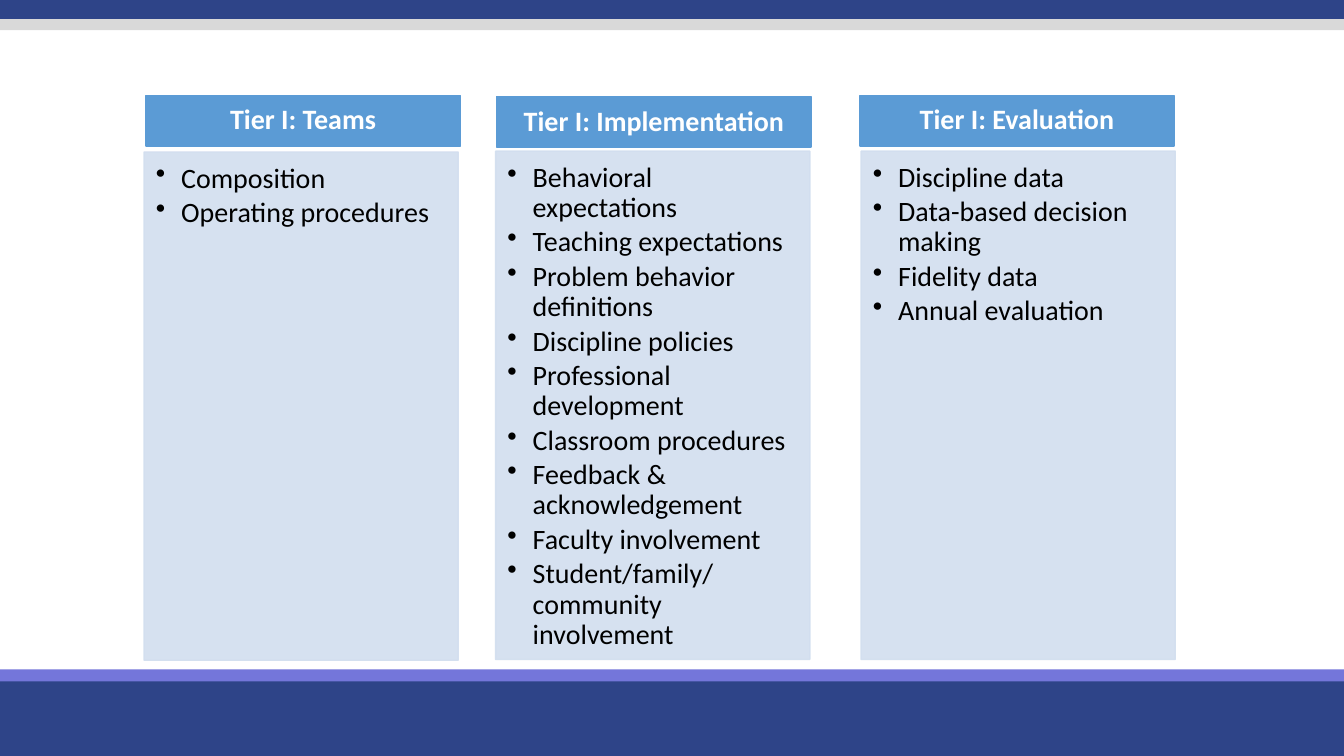
from lxml import etree
from pptx import Presentation
from pptx.dml.color import RGBColor
from pptx.enum.shapes import MSO_SHAPE
from pptx.enum.text import MSO_ANCHOR, PP_ALIGN
from pptx.oxml.ns import qn
from pptx.util import Cm, Pt

NAVY = RGBColor(0x2E, 0x44, 0x88)
VIOLET = RGBColor(0x74, 0x76, 0xDA)
GREY = RGBColor(0xD9, 0xD9, 0xD9)
BLUE = RGBColor(0x5B, 0x9B, 0xD5)
PALE = RGBColor(0xD2, 0xDE, 0xEF)
WHITE = RGBColor(0xFF, 0xFF, 0xFF)
BLACK = RGBColor(0, 0, 0)

WIDE, HIGH = 33.87, 19.05
COL_W, HEAD_H, BODY_H = 7.92, 1.27, 12.81

# Heading, header left and top, body shift from header, bullet items
COLUMNS = [
    ("Tier I: Teams", 3.68, 2.41, -0.05, 1.42,
     ["Composition", "Operating procedures"]),
    ("Tier I: Implementation", 12.52, 2.44, -0.03, 1.37,
     ["Behavioral expectations", "Teaching expectations",
      "Problem behavior definitions", "Discipline policies",
      "Professional development", "Classroom procedures",
      "Feedback & acknowledgement", "Faculty involvement",
      "Student/family/ community involvement"]),
    ("Tier I: Evaluation", 21.67, 2.41, 0.03, 1.4,
     ["Discipline data", "Data-based decision making",
      "Fidelity data", "Annual evaluation"]),
]


def add_box(slide, x, y, w, h, color, edge=False):
    box = slide.shapes.add_shape(
        MSO_SHAPE.RECTANGLE, Cm(x), Cm(y), Cm(w), Cm(h))
    box.shadow.inherit = False
    box.fill.solid()
    box.fill.fore_color.rgb = color
    if edge:
        box.line.color.rgb = color
        box.line.width = Pt(1)
    else:
        box.line.fill.background()
    return box


def fade(box, percent):
    for color in box._element.spPr.iter(qn("a:srgbClr")):
        etree.SubElement(color, qn("a:alpha"), val=str(percent * 1000))


def set_frame(box, left, top, right, bottom, anchor):
    frame = box.text_frame
    frame.word_wrap = True
    frame.margin_left, frame.margin_top = Cm(left), Cm(top)
    frame.margin_right, frame.margin_bottom = Cm(right), Cm(bottom)
    frame.vertical_anchor = anchor
    return frame


def style(para, align, color, after, bold=False):
    para.alignment = align
    para.line_spacing = 0.9
    para.space_after = Pt(after)
    font = para.font
    font.name, font.size, font.bold = "Calibri", Pt(20), bold
    font.color.rgb = color


def add_bullet(para):
    props = para._p.get_or_add_pPr()
    props.set("marL", str(Cm(0.635)))
    props.set("indent", str(-Cm(0.635)))
    etree.SubElement(props, qn("a:buChar"), char="•")


def add_bands(slide):
    for y, h, color in [(17.02, 2.03, NAVY), (16.87, 0.3, VIOLET),
                        (-0.08, 0.56, NAVY), (0.48, 0.28, GREY)]:
        # The lower navy band stays above the violet strip's edge
        add_box(slide, 0, y, WIDE, h, color)


def add_column(slide, title, x, y, dx, dy, items):
    # Header
    head = add_box(slide, x, y, COL_W, HEAD_H, BLUE, edge=True)
    frame = set_frame(head, 0.4, 0.23, 0.4, 0.23, MSO_ANCHOR.MIDDLE)
    frame.text = title
    style(frame.paragraphs[0], PP_ALIGN.CENTER, WHITE, 7, bold=True)

    # Bullet list
    body = add_box(slide, x + dx, y + dy, COL_W, BODY_H, PALE, edge=True)
    fade(body, 90)
    frame = set_frame(body, 0.3, 0.3, 0.4, 0.43, MSO_ANCHOR.TOP)
    frame.text = "\n".join(items)
    for para in frame.paragraphs:
        para.level = 1
        add_bullet(para)
        style(para, PP_ALIGN.LEFT, BLACK, 3)


def main():
    deck = Presentation()
    deck.slide_width, deck.slide_height = Cm(WIDE), Cm(HIGH)
    slide = deck.slides.add_slide(deck.slide_layouts[6])
    add_bands(slide)
    for column in COLUMNS:
        add_column(slide, *column)
    deck.save("out.pptx")


if __name__ == "__main__":
    main()
